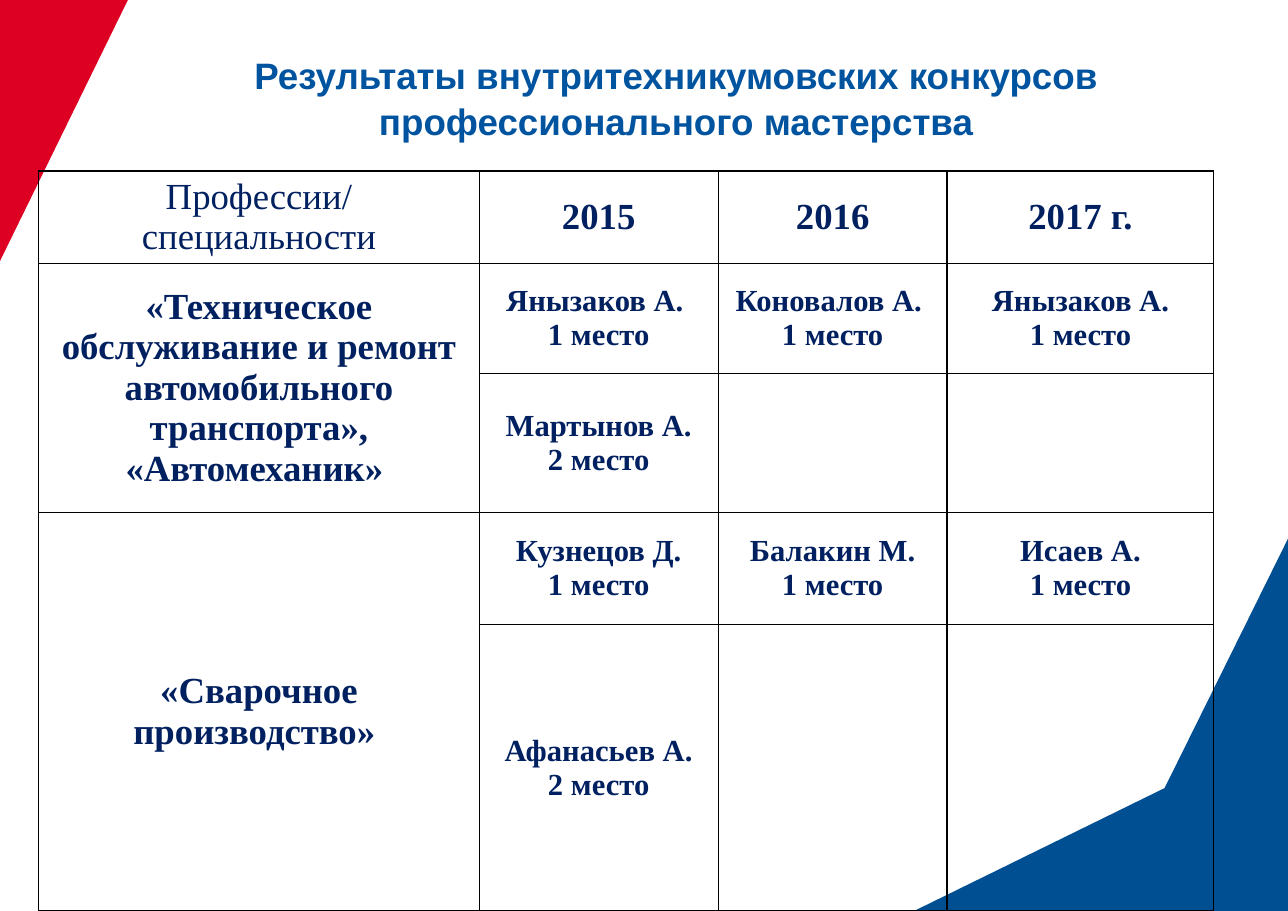
from lxml.etree import SubElement
from pptx import Presentation
from pptx.dml.color import RGBColor
from pptx.enum.text import MSO_ANCHOR as Anchor, PP_ALIGN as Align
from pptx.oxml.ns import qn
from pptx.util import Cm, Pt

COLORS = {"red": "DD0023", "blue": "004F93", "title": "00549F",
          "text": "002060", "border": "000000"}
WIDTH, HEIGHT = 29.7, 21
COLUMNS = [10.16, 5.51, 5.28, 6.15]
ROWS = [2.13, 2.54, 3.2, 2.59, 6.6]
HEADERS = ["Профессии/специальности", "2015", "2016", "2017 г."]
PROFESSIONS = {
    1: "«Техническое обслуживание и ремонт автомобильного транспорта», «Автомеханик» ",
    3: "«Сварочное производство» ",
}
WINNERS = {
    (1, 1): ["Янызаков А. ", "1 место"],
    (1, 2): ["Коновалов А. ", "1 место"],
    (1, 3): ["Янызаков А.", "1 место"],
    (2, 1): ["Мартынов А.", "2 место"],
    (3, 1): ["Кузнецов Д.", "1 место"],
    (3, 2): ["Балакин М.", "1 место"],
    (3, 3): ["Исаев А.", "1 место"],
    (4, 1): ["Афанасьев А.", "2 место"],
}


def rgb(name):
    return RGBColor.from_string(COLORS[name])


def style_para(para, font_name, size, color, bold=True):
    para.alignment = Align.CENTER
    para.font.name = font_name
    para.font.size = Pt(size)
    para.font.bold = bold
    para.font.color.rgb = rgb(color)


def add_corner(page, left, top, width, height, points, color):
    corners = [(Cm(left + x * width), Cm(top + y * height)) for x, y in points]
    builder = page.shapes.build_freeform(*corners[0])
    builder.add_line_segments(corners[1:], close=True)
    corner = builder.convert_to_shape()
    corner.shadow.inherit = False
    corner.fill.solid()
    corner.fill.fore_color.rgb = rgb(color)
    corner.line.fill.background()


def set_title(page, left, top, width, height):
    title = page.shapes.title
    title.left, title.top = Cm(left), Cm(top)
    title.width, title.height = Cm(width), Cm(height)
    frame = title.text_frame
    frame.margin_left = frame.margin_right = 0
    frame.margin_top = frame.margin_bottom = 0
    frame.vertical_anchor = Anchor.TOP
    frame.text = "Результаты внутритехникумовских конкурсов профессионального мастерства"
    para = frame.paragraphs[0]
    para.line_spacing = 1.05
    style_para(para, "Arial", 24, "title")


def draw_borders(cell):
    properties = cell._tc.get_or_add_tcPr()
    for side in ("a:lnL", "a:lnR", "a:lnT", "a:lnB"):
        line = SubElement(properties, qn(side), w=str(Pt(1)))
        fill = SubElement(line, qn("a:solidFill"))
        SubElement(fill, qn("a:srgbClr"), val=COLORS["border"])


def fill_cell(cell, lines, size, bold=True):
    cell.text = "\n".join(lines)
    for para in cell.text_frame.paragraphs:
        style_para(para, "Times New Roman", size, "text", bold)


def add_results(page, left, top, width, height):
    frame = page.shapes.add_table(len(ROWS), len(COLUMNS), Cm(left), Cm(top),
                                  Cm(width), Cm(height))
    table = frame.table
    table.first_row = table.horz_banding = False
    for column, size in zip(table.columns, COLUMNS):
        column.width = Cm(size)
    for row, size in zip(table.rows, ROWS):
        row.height = Cm(size)
    for cell in table.iter_cells():
        draw_borders(cell)
        cell.fill.background()
        cell.vertical_anchor = Anchor.MIDDLE
    for index, header in enumerate(HEADERS):
        fill_cell(table.cell(0, index), [header], 24, bold=index > 0)
    for row, profession in PROFESSIONS.items():
        cell = table.cell(row, 0)
        cell.merge(table.cell(row + 1, 0))
        cell.margin_left = cell.margin_right = Cm(0.18)
        cell.margin_top = cell.margin_bottom = 0
        fill_cell(cell, [profession], 24)
    for position, lines in WINNERS.items():
        fill_cell(table.cell(*position), lines, 20)


def main():
    deck = Presentation()
    deck.slide_width, deck.slide_height = Cm(WIDTH), Cm(HEIGHT)
    page = deck.slides.add_slide(deck.slide_layouts[5])
    add_corner(page, 0, 0, 2.95, 6.02, [(0, 0), (1, 0), (0, 1)], "red")
    add_corner(page, 21.08, 12.42, WIDTH - 21.08, HEIGHT - 12.42,
               [(1, 0), (0.67, 0.67), (0, 1), (1, 1)], "blue")
    set_title(page, 2.79, 1.17, 25.6, 3.23)
    add_results(page, 0.89, 3.94, sum(COLUMNS), sum(ROWS))
    deck.save("out.pptx")


if __name__ == "__main__":
    main()
